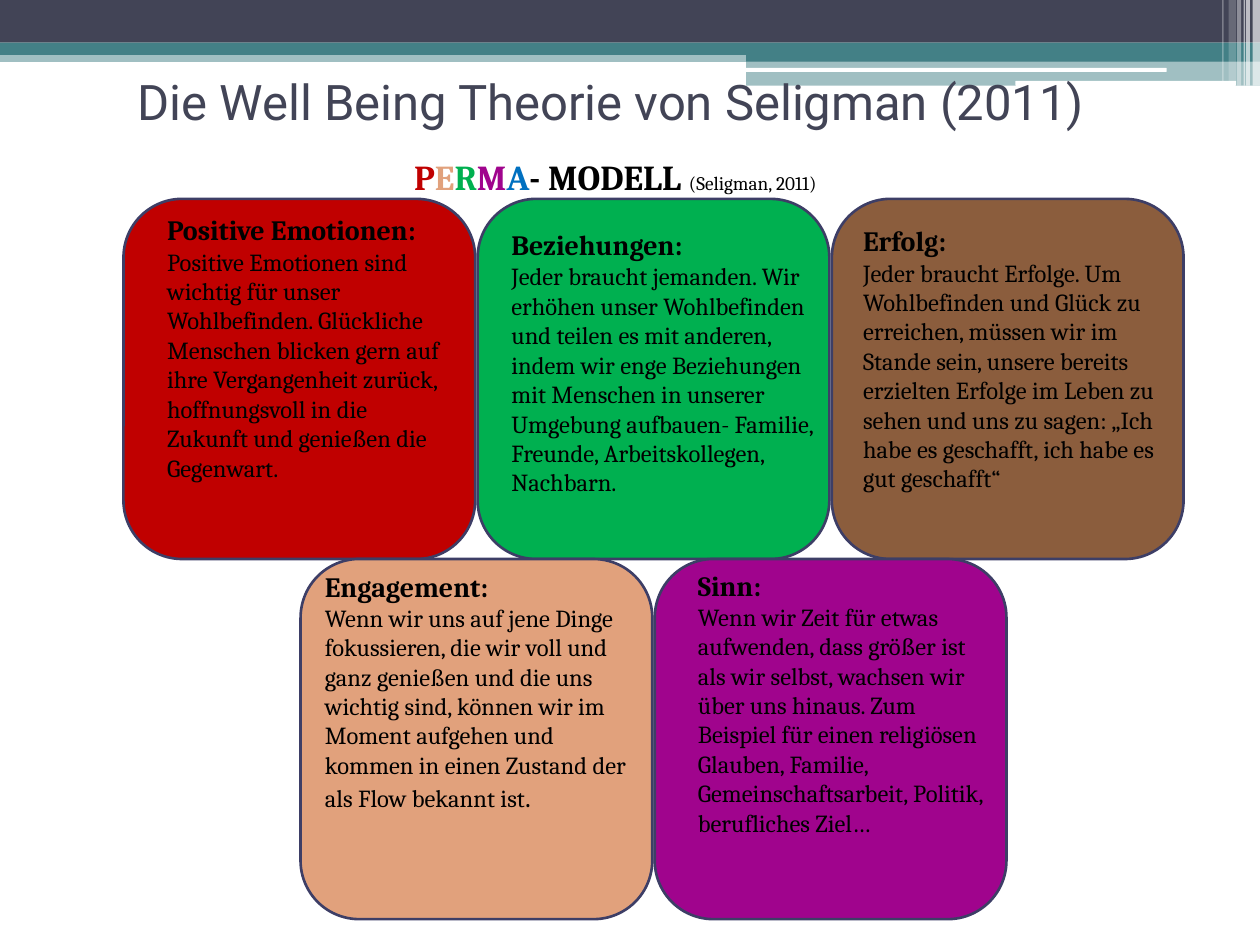
from lxml.etree import SubElement
from pptx import Presentation
from pptx.dml.color import RGBColor
from pptx.enum.shapes import MSO_SHAPE
from pptx.enum.text import MSO_ANCHOR, MSO_AUTO_SIZE, PP_ALIGN
from pptx.oxml.ns import qn
from pptx.util import Cm, Pt


class Theme:
    title_font, body_font = "Roboto", "Cambria"
    title_size, model_size, heading_size, body_size, source_size = 28, 20, 16, 14, 11
    dark, teal, white, black, outline = "424456", "438086", "FFFFFF", "000000", "3D3E66"
    red, green, brown = "C00000", "00B050", "8B5D3D"
    peach, purple, blue = "E1A17C", "A0048D", "0070C0"


def add_block(shapes, kind, box, color, opacity=100):
    shape = shapes.add_shape(kind, *[Cm(value) for value in box])
    shape.shadow.inherit = False
    shape.fill.solid()
    shape.fill.fore_color.rgb = RGBColor.from_string(color)
    if opacity < 100:
        color_element = shape.element.spPr.find(qn("a:solidFill"))[0]
        SubElement(color_element, qn("a:alpha"), val=str(opacity * 1000))
    shape.line.fill.background()
    return shape


def add_run(paragraph, text, size, color=Theme.black, bold=False, font=Theme.body_font):
    run = paragraph.add_run()
    run.text = text
    run.font.name, run.font.size, run.font.bold = font, Pt(size), bold
    run.font.color.rgb = RGBColor.from_string(color)


presentation = Presentation()
presentation.slide_width, presentation.slide_height = Cm(25.4), Cm(19.05)
slide = presentation.slides.add_slide(presentation.slide_layouts[5])

# Header bands: left, top, width, height, colour, opacity
bands = [
    (0, 1.02, 25.4, 0.23, Theme.teal, 50),
    (0, 0, 25.4, 0.86, Theme.dark, 100),
    (0, 0.86, 25.4, 0.25, Theme.teal, 100),
    (15.04, 0.99, 10.36, 0.25, Theme.teal, 100),
    (15.04, 1.22, 10.36, 0.51, Theme.teal, 50),
]
for *box, color, opacity in bands:
    add_block(slide.shapes, MSO_SHAPE.RECTANGLE, box, color, opacity)

# White rounded bars
for box in [(15.01, 1.37, 8.51, 0.08), (20.47, 1.63, 4.45, 0.1)]:
    add_block(slide.shapes, MSO_SHAPE.ROUNDED_RECTANGLE, box, Theme.white)

# Upright stripes: left, width, height, opacity
stripes = [
    (25.25, 0.15, 1.73, 65),
    (25.12, 0.08, 1.73, 65),
    (25.07, 0.03, 1.73, 60),
    (24.94, 0.08, 1.73, 40),
    (24.77, 0.15, 1.63, 20),
    (24.64, 0.03, 1.63, 30),
]
for left, width, height, opacity in stripes:
    add_block(slide.shapes, MSO_SHAPE.RECTANGLE, (left, 0, width, height), Theme.white, opacity)

# Title, in front of the header
title = slide.shapes.title
title.left, title.top, title.width, title.height = Cm(2.11), Cm(1.32), Cm(20.4), Cm(2.01)
title.text_frame.vertical_anchor = MSO_ANCHOR.TOP
title.text_frame.auto_size = MSO_AUTO_SIZE.NONE
paragraph = title.text_frame.paragraphs[0]
paragraph.alignment = PP_ALIGN.CENTER
add_run(paragraph, "Die Well Being Theorie von Seligman (2011)",
        Theme.title_size, Theme.dark, font=Theme.title_font)
title.element.getparent().append(title.element)

# Cards: column, row, colour, text box, heading, body, full stop in heading size
card_left, card_top, card_width, card_height = 2.49, 4.01, 7.09, 7.26
column_step = 7.14
cards = [
    (0, 0, Theme.red, (3.12, 4.17, 6.22, 5.46), "Positive Emotionen:",
     "Positive Emotionen sind wichtig für unser Wohlbefinden. Glückliche Menschen "
     "blicken gern auf ihre Vergangenheit zurück, hoffnungsvoll in die Zukunft und "
     "genießen die Gegenwart.", ""),
    (1, 0, Theme.green, (10.06, 4.47, 6.83, 5.74), "Beziehungen:",
     "Jeder braucht jemanden. Wir erhöhen unser Wohlbefinden und teilen es mit "
     "anderen, indem wir enge Beziehungen mit Menschen in unserer Umgebung aufbauen- "
     "Familie, Freunde, Arbeitskollegen, Nachbarn.", ""),
    (2, 0, Theme.brown, (17.15, 4.39, 6.45, 6.32), "Erfolg:",
     "Jeder braucht Erfolge. Um Wohlbefinden und Glück zu erreichen, müssen wir im "
     "Stande sein, unsere bereits erzielten Erfolge im Leben zu sehen und uns zu "
     "sagen: „Ich habe es geschafft, ich habe es gut geschafft“", ""),
    (0.5, 1, Theme.peach, (6.3, 11.35, 6.91, 5.99), "Engagement:",
     "Wenn wir uns auf jene Dinge fokussieren, die wir voll und ganz genießen und "
     "die uns wichtig sind, können wir im Moment aufgehen und kommen in einen Zustand "
     "der als Flow bekannt ist", "."),
    (1.5, 1, Theme.purple, (13.82, 11.33, 6.27, 6.32), "Sinn:",
     "Wenn wir Zeit für etwas aufwenden, dass größer ist als wir selbst, wachsen wir "
     "über uns hinaus. Zum Beispiel für einen religiösen Glauben, Familie, "
     "Gemeinschaftsarbeit, Politik, berufliches Ziel…", ""),
]
for column, row, color, text_box, heading, body, full_stop in cards:
    group = slide.shapes.add_group_shape()
    box = (card_left + column * column_step, card_top + row * card_height,
           card_width, card_height)
    card = add_block(group.shapes, MSO_SHAPE.ROUNDED_RECTANGLE, box, color)
    card.line.color.rgb = RGBColor.from_string(Theme.outline)
    card.line.width = Pt(1.5)

    text_frame = group.shapes.add_textbox(*[Cm(value) for value in text_box]).text_frame
    text_frame.word_wrap = True
    text_frame.auto_size = MSO_AUTO_SIZE.SHAPE_TO_FIT_TEXT
    add_run(text_frame.paragraphs[0], heading, Theme.heading_size, bold=True)
    paragraph = text_frame.add_paragraph()
    add_run(paragraph, body, Theme.body_size)
    if full_stop:
        add_run(paragraph, full_stop, Theme.heading_size)

# Model name with coloured initials
text_frame = slide.shapes.add_textbox(Cm(8.1), Cm(3.02), Cm(13.03), Cm(1.12)).text_frame
text_frame.word_wrap = True
text_frame.auto_size = MSO_AUTO_SIZE.SHAPE_TO_FIT_TEXT
paragraph = text_frame.paragraphs[0]
initial_colors = [Theme.red, Theme.peach, Theme.green, Theme.purple, Theme.blue]
for initial, color in zip("PERMA", initial_colors):
    add_run(paragraph, initial, Theme.model_size, color, bold=True)
add_run(paragraph, "- MODELL ", Theme.model_size, bold=True)
add_run(paragraph, "(Seligman, 2011)", Theme.source_size)

presentation.save("out.pptx")
